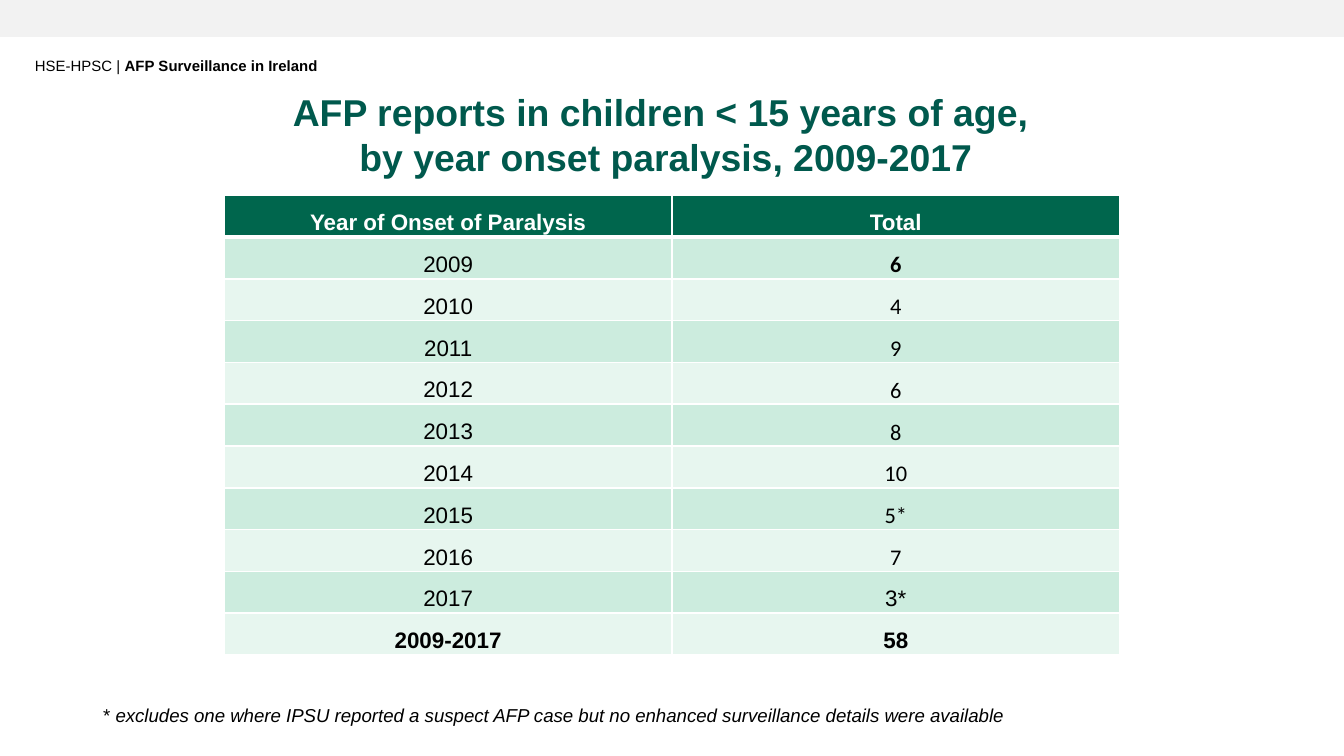
"""Build the slide of AFP reports by year of onset of paralysis."""
from lxml import etree
from pptx import Presentation
from pptx.dml.color import RGBColor
from pptx.enum import shapes, text
from pptx.oxml import ns
from pptx.util import Cm, Pt

BLACK = RGBColor(0x00, 0x00, 0x00)
WHITE = RGBColor(0xFF, 0xFF, 0xFF)
BAND_GREY = RGBColor(0xF2, 0xF2, 0xF2)
TITLE_GREEN = RGBColor(0x00, 0x59, 0x4D)
HEADER_GREEN = RGBColor(0x00, 0x66, 0x4D)
ROW_GREENS = (RGBColor(0xE7, 0xF6, 0xEF), RGBColor(0xCC, 0xEC, 0xDE))

RUNNING_HEAD = [[("HSE-HPSC | ", {}), ("AFP Surveillance in Ireland", {"bold": True})]]
TITLE = [
    [("AFP reports in children < 15 years of age, ", {"bold": True})],
    [("by year onset paralysis, 2009-2017", {"bold": True})],
]
FOOTNOTE = [[
    ("* ", {}),
    ("excludes one where IPSU reported a suspect AFP case but no enhanced "
     "surveillance details were available", {"italic": True}),
]]
REPORTS = [
    ("Year of Onset of Paralysis", "Total"),
    ("2009", "6"),
    ("2010", "4"),
    ("2011", "9"),
    ("2012", "6"),
    ("2013", "8"),
    ("2014", "10"),
    ("2015", "5*"),
    ("2016", "7"),
    ("2017", "3*"),
    ("2009-2017", "58"),
]
CALIBRI_ROWS = range(1, 9)
BOLD_CELLS = {(0, 0), (0, 1), (1, 1), (10, 0), (10, 1)}


def style_font(font, size, color, name="Arial", bold=False, italic=False):
    font.name, font.size, font.bold, font.italic = name, Pt(size), bold, italic
    font.color.rgb = color


def add_text(slide, box, paragraphs, size, color, align=text.PP_ALIGN.LEFT, wrap=True):
    text_frame = slide.shapes.add_textbox(*map(Cm, box)).text_frame
    text_frame.word_wrap = wrap
    for index, runs in enumerate(paragraphs):
        paragraph = text_frame.add_paragraph() if index else text_frame.paragraphs[0]
        paragraph.alignment = align
        for content, emphasis in runs:
            run = paragraph.add_run()
            run.text = content
            style_font(run.font, size, color, **emphasis)


def set_borders(cell, bottom_width):
    properties = cell._tc.get_or_add_tcPr()
    widths = {"a:lnL": 1, "a:lnR": 1, "a:lnT": 1, "a:lnB": bottom_width}
    for position, (tag, width) in enumerate(widths.items()):
        line = etree.Element(ns.qn(tag), w=str(Pt(width)))
        fill = etree.SubElement(line, ns.qn("a:solidFill"))
        etree.SubElement(fill, ns.qn("a:srgbClr"), val=str(WHITE))
        properties.insert(position, line)


def add_reports_table(slide, left, top, column_width, row_height):
    rows, columns = len(REPORTS), len(REPORTS[0])
    table = slide.shapes.add_table(
        rows, columns, Cm(left), Cm(top),
        Cm(column_width * columns), Cm(row_height * rows)).table
    for column in table.columns:
        column.width = Cm(column_width)
    for row_index, values in enumerate(REPORTS):
        table.rows[row_index].height = Cm(row_height)
        is_header = row_index == 0
        for column_index, value in enumerate(values):
            cell = table.cell(row_index, column_index)
            is_calibri = column_index == 1 and row_index in CALIBRI_ROWS
            cell.margin_left = cell.margin_right = Cm(0.18 if is_calibri else 0.02)
            cell.margin_top, cell.margin_bottom = Cm(0.02), 0
            cell.vertical_anchor = text.MSO_ANCHOR.MIDDLE
            cell.fill.solid()
            cell.fill.fore_color.rgb = HEADER_GREEN if is_header else ROW_GREENS[row_index % 2]
            set_borders(cell, 3 if is_header else 1)
            paragraph = cell.text_frame.paragraphs[0]
            paragraph.text = value
            paragraph.alignment = text.PP_ALIGN.CENTER
            paragraph.line_spacing = 1.5
            style_font(paragraph.runs[0].font, 12, WHITE if is_header else BLACK,
                       "Calibri" if is_calibri else "Arial",
                       (row_index, column_index) in BOLD_CELLS)


def main():
    presentation = Presentation()
    presentation.slide_width, presentation.slide_height = Cm(25.4), Cm(14.29)
    slide = presentation.slides.add_slide(presentation.slide_layouts[6])

    band = slide.shapes.add_shape(
        shapes.MSO_SHAPE.RECTANGLE, 0, 0, presentation.slide_width, Cm(0.7))
    band.shadow.inherit = False
    band.fill.solid()
    band.fill.fore_color.rgb = BAND_GREY
    band.line.fill.background()

    add_text(slide, (0.41, 0.94, 5.92, 0.6), RUNNING_HEAD, 8, BLACK, wrap=False)
    add_text(slide, (0.89, 1.57, 23.4, 1.96), TITLE, 20, TITLE_GREEN, text.PP_ALIGN.CENTER)
    add_reports_table(slide, left=4.24, top=3.69, column_width=8.46, row_height=0.79)
    add_text(slide, (1.7, 13.18, 18.6, 0.68), FOOTNOTE, 10, BLACK)
    presentation.save("out.pptx")


if __name__ == "__main__":
    main()
